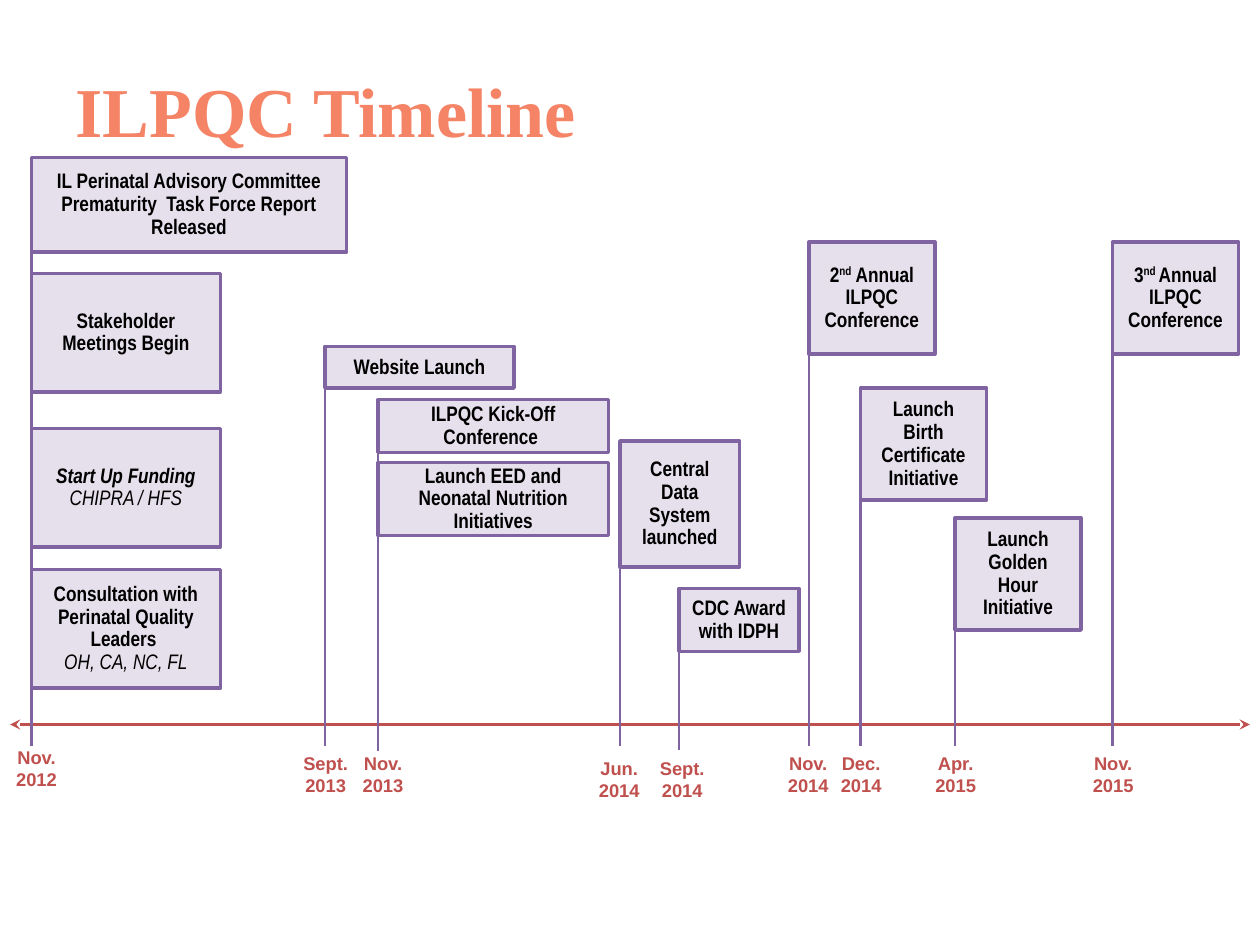
from lxml import etree
from pptx import Presentation
from pptx import util as u
from pptx.dml.color import RGBColor
from pptx.enum import shapes, text
from pptx.oxml import ns

PURPLE, LAVENDER, RED = "8064A2", "E6E0EC", "C0504D"
AXIS_Y = 5.75


def paint(target, colour):
    if hasattr(target, "solid"):
        target.solid()
        target = target.fore_color
    elif hasattr(target, "color"):
        target = target.color
    target.rgb = RGBColor.from_string(colour)


def add_run(paragraph, words, font, size, colour, bold=True, italic=False):
    run = paragraph.add_run()
    run.text = words
    run.font.name = font
    run.font.size = u.Pt(size)
    run.font.bold = bold
    run.font.italic = italic
    paint(run.font, colour)
    return run


presentation = Presentation()
presentation.slide_width = u.Inches(10)
presentation.slide_height = u.Inches(7.5)
slide = presentation.slides.add_slide(presentation.slide_layouts[5])

title = slide.shapes.title
title.left, title.top = u.Inches(0.5), u.Inches(0.3)
title.width, title.height = u.Inches(9), u.Inches(0.95)
title.text_frame.auto_size = text.MSO_AUTO_SIZE.NONE
title.text_frame.vertical_anchor = text.MSO_ANCHOR.BOTTOM
title.text_frame.paragraphs[0].alignment = text.PP_ALIGN.LEFT
add_run(title.text_frame.paragraphs[0], "ILPQC Timeline", "Times New Roman", 40, "F58466")

dates = [
    ("Nov.", "2012", 0.25, 1.75, 5.92, 0, 5.87, 0.58),
    ("Sept.", "2013", 2.58, 2.92, 5.92, 2.25, 5.92, 0.67),
    ("Nov.", "2013", 3, 3.37, 5.96, 2.75, 5.92, 0.58),
    ("Jun.", "2014", 4.92, 4.08, 5.92, 4.58, 5.96, 0.67),
    ("Sept.", "2014", 5.39, 4.67, 5.95, 5.08, 5.96, 0.67),
    ("Nov.", "2014", 6.42, 2.17, 5.92, 6.08, 5.92, 0.67),
    ("Dec.", "2014", 6.83, 3.25, 5.92, 6.5, 5.92, 0.67),
    ("Apr.", "2015", 7.58, 4.25, 5.92, 7.25, 5.92, 0.67),
    ("Nov.", "2015", 8.83, 2.17, 5.92, 8.5, 5.92, 0.67),
]

lines = [(0.08, AXIS_Y, 9.92, AXIS_Y, RED)]
lines += [(x, top, x, bottom, PURPLE) for _, _, x, top, bottom, *_ in dates]
for x1, y1, x2, y2, colour in lines:
    connector = slide.shapes.add_connector(
        shapes.MSO_CONNECTOR.STRAIGHT, u.Inches(x1), u.Inches(y1), u.Inches(x2), u.Inches(y2))
    connector.line.width = u.Pt(1.25)
    paint(connector.line, colour)
    properties = connector._element.spPr
    if y1 == y2:
        for end in ("a:headEnd", "a:tailEnd"):
            etree.SubElement(properties.find(ns.qn("a:ln")), ns.qn(end), type="stealth")
    etree.SubElement(properties, ns.qn("a:effectLst"))

for month, year, _, _, _, left, top, width in dates:
    label = slide.shapes.add_textbox(u.Inches(left), u.Inches(top), u.Inches(width), u.Inches(0.45))
    label.text_frame.word_wrap = True
    label.text_frame.auto_size = text.MSO_AUTO_SIZE.SHAPE_TO_FIT_TEXT
    paragraph = label.text_frame.paragraphs[0]
    paragraph.alignment = text.PP_ALIGN.CENTER
    add_run(paragraph, month, "Arial", 10.5, RED)
    paragraph.add_line_break()
    add_run(paragraph, year, "Arial", 10.5, RED)

events = [
    (0.25, 1.25, 2.5, 0.75,
     [[("IL Perinatal Advisory Committee Prematurity  Task Force Report Released", "bold")]]),
    (0.25, 2.17, 1.5, 0.94, [[("Stakeholder Meetings Begin", "bold")]]),
    (0.25, 3.4, 1.5, 0.94, [[("Start Up Funding ", "bold italic"), ("CHIPRA / HFS", "italic")]]),
    (0.25, 4.52, 1.5, 0.94,
     [[("Consultation with Perinatal Quality Leaders ", "bold")], [("OH, CA, NC, FL", "italic")]]),
    (2.58, 2.75, 1.5, 0.33, [[("Website Launch", "bold")]]),
    (3, 3.17, 1.83, 0.42, [[("ILPQC Kick-Off Conference ", "bold")]]),
    (3, 3.67, 1.83, 0.58, [[("Launch EED and Neonatal Nutrition Initiatives", "bold")]]),
    (4.92, 3.5, 0.95, 1, [[("Central Data System launched", "bold")]]),
    (5.39, 4.67, 0.95, 0.5, [[("CDC Award with IDPH", "bold")]]),
    (6.42, 1.92, 1, 0.89,
     [[("2", "bold"), ("nd", "bold raised"), (" Annual ILPQC Conference", "bold")]]),
    (6.83, 3.08, 1, 0.89, [[("Launch Birth Certificate Initiative", "bold")]]),
    (7.58, 4.11, 1, 0.89, [[("Launch Golden Hour Initiative", "bold")]]),
    (8.83, 1.92, 1, 0.89,
     [[("3", "bold"), ("nd ", "bold raised"), ("Annual ILPQC Conference", "bold")]]),
]

for left, top, width, height, paragraphs in events:
    box = slide.shapes.add_shape(
        shapes.MSO_SHAPE.RECTANGLE, u.Inches(left), u.Inches(top), u.Inches(width), u.Inches(height))
    box.shadow.inherit = False
    paint(box.fill, LAVENDER)
    paint(box.line, PURPLE)
    box.line.width = u.Pt(2)
    frame = box.text_frame
    frame.word_wrap = True
    frame.vertical_anchor = text.MSO_ANCHOR.MIDDLE
    for index, runs in enumerate(paragraphs):
        paragraph = frame.add_paragraph() if index else frame.paragraphs[0]
        paragraph.alignment = text.PP_ALIGN.CENTER
        paragraph.line_spacing = 0.9
        for words, style in runs:
            run = add_run(paragraph, words, "Arial Narrow", 12, "000000",
                          "bold" in style, "italic" in style)
            if "raised" in style:
                run.font._element.set("baseline", "30000")

presentation.save("out.pptx")
